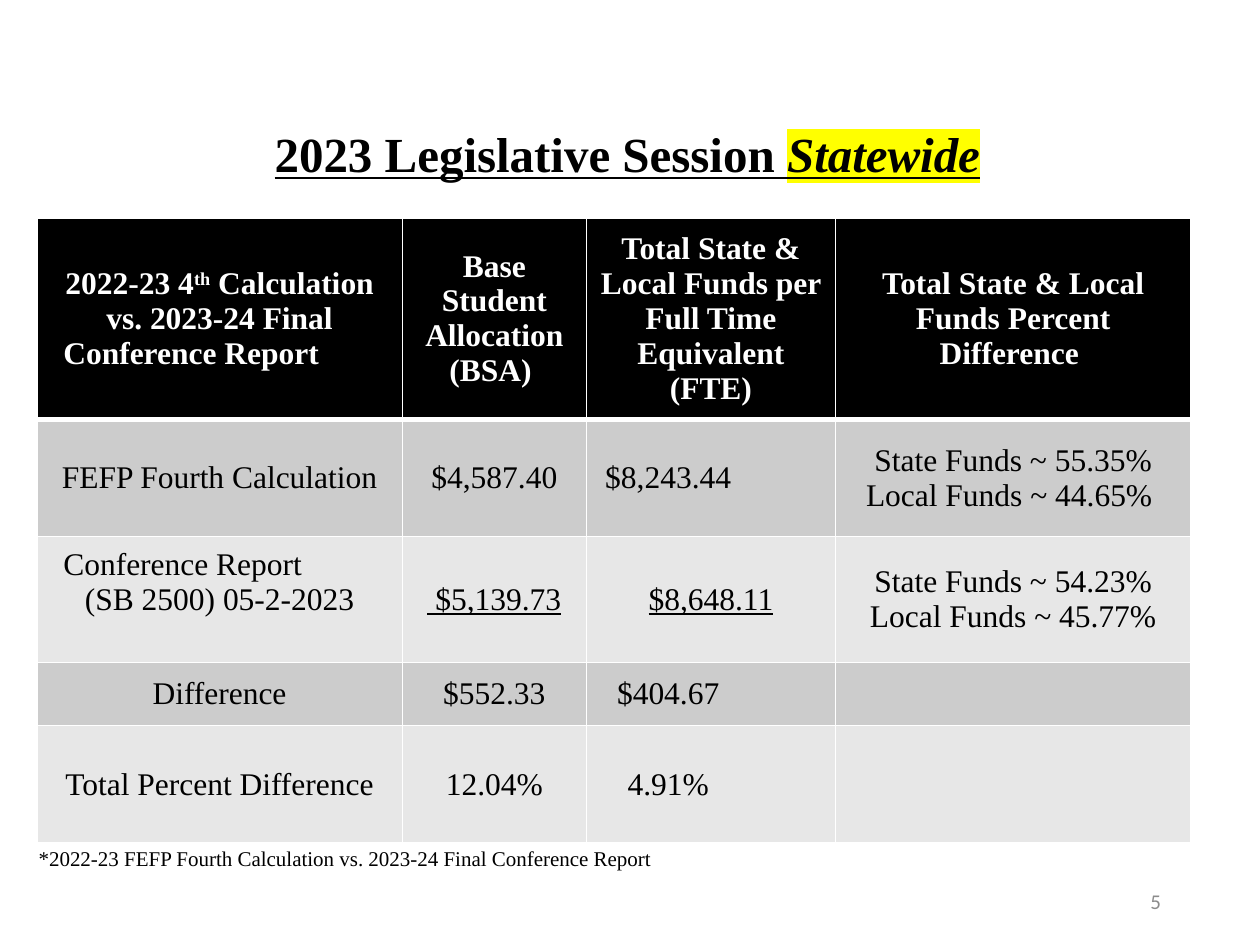
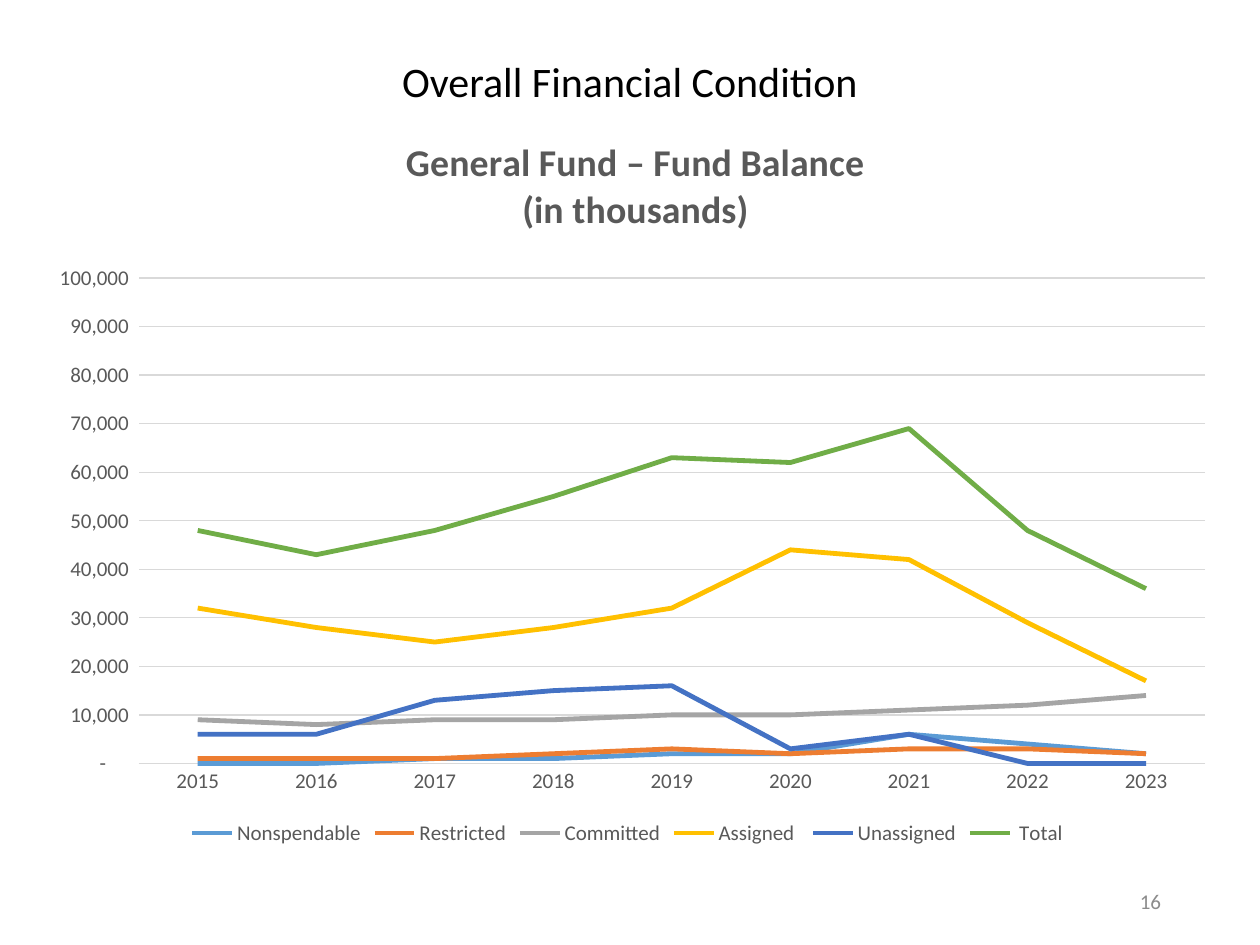
from lxml import etree
from pptx import Presentation
from pptx.chart.data import CategoryChartData
from pptx.dml.color import RGBColor
from pptx.enum import chart as ch, text as tx
from pptx.oxml.ns import qn
from pptx.util import Pt

BLACK = RGBColor(0, 0, 0)
WHITE = RGBColor(255, 255, 255)
DARK_BAND = RGBColor(0xCC, 0xCC, 0xCC)
LIGHT_BAND = RGBColor(0xE7, 0xE7, 0xE7)
NUMBER_GRAY = RGBColor(0x8C, 0x8C, 0x8C)
LABEL_GRAY = RGBColor(0x59, 0x59, 0x59)
GRID_GRAY = RGBColor(0xD9, 0xD9, 0xD9)
SERIF, SANS = "Times New Roman", "Calibri"
CENTER, LEFT, RIGHT = tx.PP_ALIGN.CENTER, tx.PP_ALIGN.LEFT, tx.PP_ALIGN.RIGHT

SESSION_TITLE = ["2023 Legislative Session ", "Statewide"]
FOOTNOTE = "*2022-23 FEFP Fourth Calculation vs. 2023-24 Final Conference Report"
FUNDING = [
    [["2022-23 4^th^ Calculation vs. 2023-24 Final", "Conference Report"],
     ["Base Student Allocation (BSA) "],
     ["Total State & Local Funds per Full Time Equivalent (FTE)"],
     ["Total State & Local Funds Percent Difference "]],
    [["FEFP Fourth Calculation"], ["$4,587.40"], ["$8,243.44"],
     ["State Funds ~ 55.35%", "Local Funds ~ 44.65% "]],
    [["Conference Report", "(SB 2500) 05-2-2023"], [" $5,139.73"], ["$8,648.11"],
     ["State Funds ~ 54.23%", "Local Funds ~ 45.77%"]],
    [["Difference"], ["$552.33"], ["$404.67"], []],
    [["Total Percent Difference"], ["12.04%"], ["4.91%"], []],
]
COLUMN_WIDTHS = [209, 105, 142.5, 203]
ROW_HEIGHTS = [114.5, 67, 72, 36, 67]
INDENTED = "Conference Report"
UNDERLINED = {" $5,139.73", "$8,648.11"}
SHIFTED_LEFT = {"$8,243.44", "$404.67", "4.91%"}

CONDITION_TITLE = "Overall Financial Condition"
CHART_TITLE = ["General Fund – Fund Balance", "(in thousands)"]
YEARS = [str(year) for year in range(2015, 2024)]
BALANCES = [
    ("Nonspendable", "5B9BD5", [0, 0, 1000, 1000, 2000, 2000, 6000, 4000, 2000]),
    ("Restricted", "ED7D31", [1000, 1000, 1000, 2000, 3000, 2000, 3000, 3000, 2000]),
    ("Committed", "A5A5A5", [9000, 8000, 9000, 9000, 10000, 10000, 11000, 12000, 14000]),
    ("Assigned ", "FFC000", [32000, 28000, 25000, 28000, 32000, 44000, 42000, 29000, 17000]),
    ("Unassigned", "4472C4", [6000, 6000, 13000, 15000, 16000, 3000, 6000, 0, 0]),
    (" Total ", "70AD47", [48000, 43000, 48000, 55000, 63000, 62000, 69000, 48000, 36000]),
]
MONEY_FORMAT = '_(* #,##0_);_(* \\(#,##0\\);_(* "-"??_);_('


def style(font, size, color, name, bold=False):
    font.size, font.name, font.bold = Pt(size), name, bold
    font.color.rgb = color


def add_text(page, place, spans, size, color, name, align=CENTER, bold=False):
    box = page.shapes.add_textbox(*map(Pt, place))
    box.text_frame.word_wrap = True
    para = box.text_frame.paragraphs[0]
    para.alignment = align
    for words in spans:
        span = para.add_run()
        span.text = words
        style(span.font, size, color, name, bold)
    return box


def add_page(deck, number):
    page = deck.slides.add_slide(deck.slide_layouts[6])
    box = add_text(page, (508.5, 500.5, 162, 28.5), [number], 12, NUMBER_GRAY, SANS, RIGHT)
    box.text_frame.vertical_anchor = tx.MSO_ANCHOR.MIDDLE
    return page


def highlight(span, color):
    mark = etree.Element(qn("a:highlight"))
    etree.SubElement(mark, qn("a:srgbClr")).set("val", color)
    span.font._element.find(qn("a:solidFill")).addnext(mark)


def border_cell(cell, top, bottom):
    properties = cell._tc.get_or_add_tcPr()
    sides = [("L", 1), ("R", 1), ("T", top), ("B", bottom)]
    for place, (side, width) in enumerate(sides):
        line = etree.Element(qn(f"a:ln{side}"), w=str(Pt(width)))
        fill = etree.SubElement(line, qn("a:solidFill"))
        etree.SubElement(fill, qn("a:srgbClr")).set("val", str(WHITE))
        properties.insert(place, line)


def fill_cell(cell, lines, row):
    header = row == 0
    cell.vertical_anchor = tx.MSO_ANCHOR.MIDDLE
    cell.fill.solid()
    cell.fill.fore_color.rgb = BLACK if header else DARK_BAND if row % 2 else LIGHT_BAND
    border_cell(cell, 3 if row == 1 else 1, 3 if header else 1)
    if SHIFTED_LEFT.intersection(lines):
        cell.margin_right = Pt(56)
    if lines and lines[0] == INDENTED:
        cell.margin_bottom = Pt(24)
    for index, words in enumerate(lines):
        frame = cell.text_frame
        para = frame.add_paragraph() if index else frame.paragraphs[0]
        para.alignment = CENTER
        if words == INDENTED:
            para.alignment = LEFT
            para._p.get_or_add_pPr().set("marL", str(Pt(8)))
        for part, piece in enumerate(words.split("^")):
            span = para.add_run()
            span.text = piece
            style(span.font, 18, WHITE if header else BLACK, SERIF, header)
            span.font.underline = words in UNDERLINED
            if part % 2:
                span.font._element.set("baseline", "30000")


def build_session(deck):
    page = add_page(deck, "5")
    title = add_text(page, (6.5, 67, 704, 128), SESSION_TITLE, 28, BLACK, SERIF, bold=True)
    spans = title.text_frame.paragraphs[0].runs
    for span in spans:
        span.font.underline = True
    spans[1].font.italic = True
    highlight(spans[1], "FFFF00")
    table = page.shapes.add_table(
        len(ROW_HEIGHTS), len(COLUMN_WIDTHS), Pt(21), Pt(124.5),
        Pt(sum(COLUMN_WIDTHS)), Pt(sum(ROW_HEIGHTS))).table
    table.horz_banding = False
    table.first_row = False
    for column, width in zip(table.columns, COLUMN_WIDTHS):
        column.width = Pt(width)
    for row, height in enumerate(ROW_HEIGHTS):
        table.rows[row].height = Pt(height)
        for column, lines in enumerate(FUNDING[row]):
            fill_cell(table.cell(row, column), lines, row)
    add_text(page, (15, 479.5, 402, 36), [FOOTNOTE], 12, BLACK, SERIF, LEFT)


def set_layout(parent, **settings):
    for old in parent.findall(qn("c:layout")):
        parent.remove(old)
    layout = etree.Element(qn("c:layout"))
    manual = etree.SubElement(layout, qn("c:manualLayout"))
    for key, value in settings.items():
        etree.SubElement(manual, qn(f"c:{key}")).set("val", str(value))
    text = parent.find(qn("c:tx"))
    if text is None:
        parent.insert(0, layout)
    else:
        text.addnext(layout)


def style_axis(axis):
    axis.major_tick_mark = axis.minor_tick_mark = ch.XL_TICK_MARK.NONE
    style(axis.tick_labels.font, 12, LABEL_GRAY, SANS)


def build_condition(deck):
    page = add_page(deck, "16")
    add_text(page, (90, 28, 540, 36), [CONDITION_TITLE], 24, BLACK, SANS)
    data = CategoryChartData()
    data.categories = YEARS
    for name, _, values in BALANCES:
        data.add_series(name, values)
    chart = page.shapes.add_chart(
        ch.XL_CHART_TYPE.LINE, Pt(17.5), Pt(72), Pt(685), Pt(414), data).chart
    style(chart.font, 10, BLACK, SANS)
    chart.has_title = True
    frame = chart.chart_title.text_frame
    frame.text = "\n".join(CHART_TITLE)
    for para in frame.paragraphs:
        para.alignment = CENTER
        style(para.runs[0].font, 21.6, LABEL_GRAY, SANS, True)
    set_layout(chart.chart_title._element, xMode="edge", yMode="edge", x=0.31, y=0.01)
    set_layout(chart._chartSpace.chart.plotArea, layoutTarget="inner",
               xMode="edge", yMode="edge", x=0.09, y=0.21, w=0.89, h=0.67)
    chart.has_legend = True
    chart.legend.position = ch.XL_LEGEND_POSITION.BOTTOM
    chart.legend.include_in_layout = False
    style(chart.legend.font, 12, LABEL_GRAY, SANS)
    years, amounts = chart.category_axis, chart.value_axis
    style_axis(years)
    style_axis(amounts)
    years.format.line.color.rgb = GRID_GRAY
    years.format.line.width = Pt(1)
    amounts.format.line.fill.background()
    amounts.minimum_scale, amounts.maximum_scale, amounts.major_unit = 0, 100000, 10000
    amounts.tick_labels.number_format = MONEY_FORMAT
    amounts.tick_labels.number_format_is_linked = False
    amounts.major_gridlines.format.line.color.rgb = GRID_GRAY
    amounts.major_gridlines.format.line.width = Pt(0.75)
    chart.plots[0].vary_by_categories = False
    for series, (_, color, _) in zip(chart.plots[0].series, BALANCES):
        series.smooth = False
        series.marker.style = ch.XL_MARKER_STYLE.NONE
        series.format.line.color.rgb = RGBColor.from_string(color)
        series.format.line.width = Pt(2.75)


def main():
    deck = Presentation()
    deck.slide_width, deck.slide_height = Pt(720), Pt(540)
    build_session(deck)
    build_condition(deck)
    deck.save("out.pptx")


if __name__ == "__main__":
    main()
